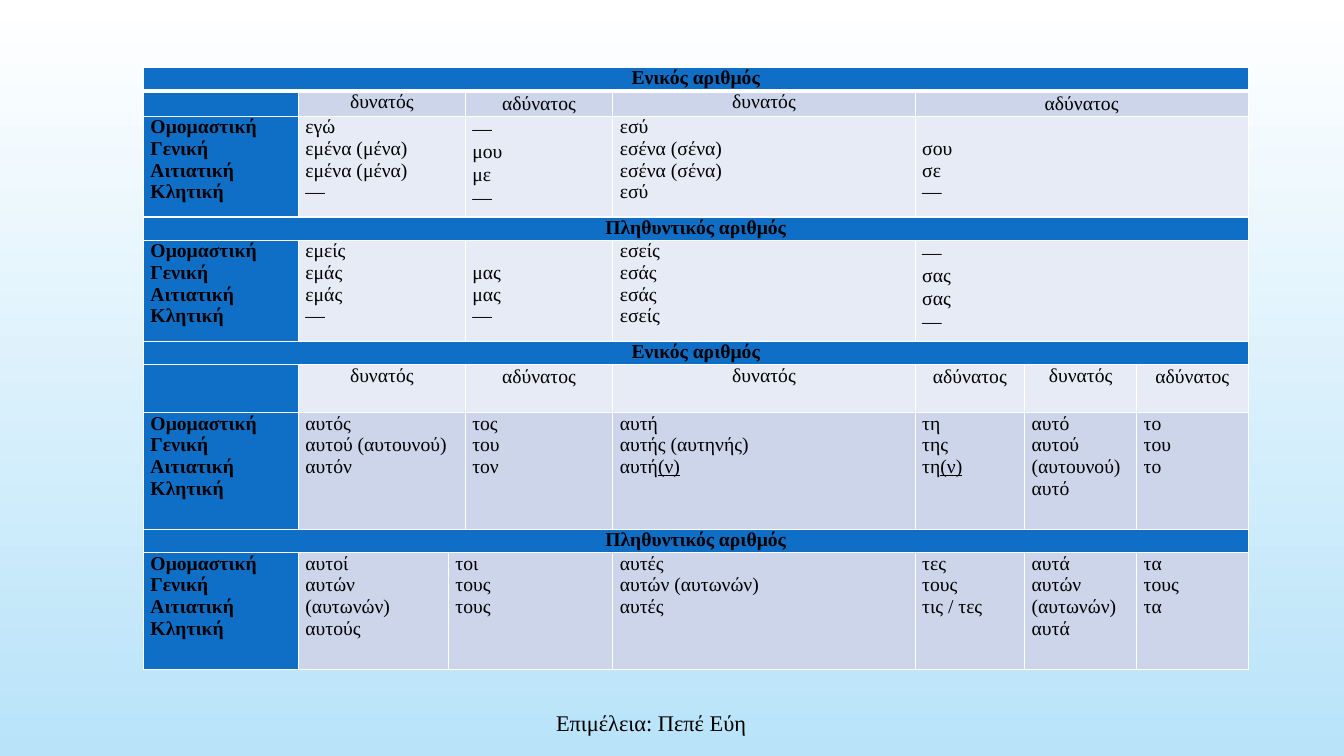
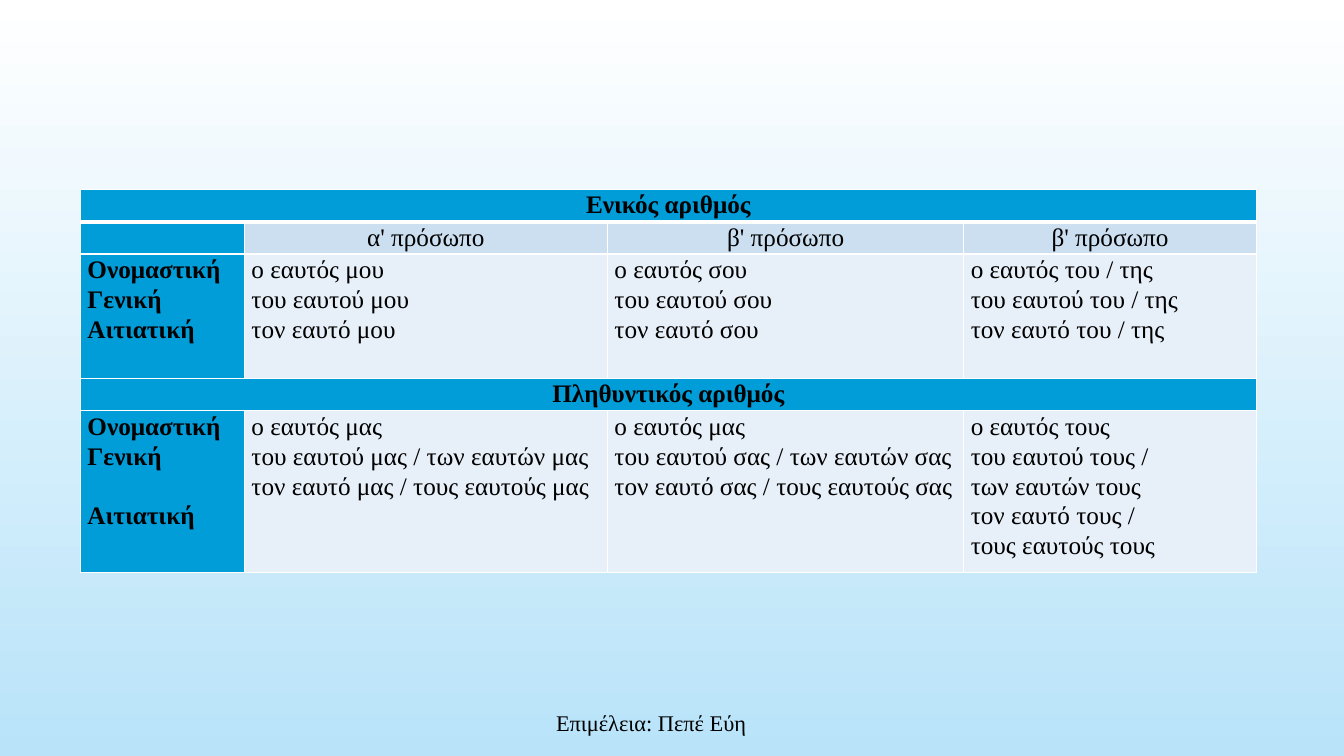
from dataclasses import dataclass

from lxml import etree
from pptx import Presentation
from pptx.dml.color import RGBColor
from pptx.enum import text as t
from pptx.oxml import ns
from pptx.util import Pt

FONT = "Times New Roman"
BLACK = RGBColor(0x00, 0x00, 0x00)
WHITE = RGBColor(0xFF, 0xFF, 0xFF)
SKY = RGBColor(0xB8, 0xE3, 0xF9)
BLUE = RGBColor(0x0F, 0x6F, 0xC6)
BLUE_MID = RGBColor(0xCC, 0xD5, 0xEA)
BLUE_PALE = RGBColor(0xE7, 0xEB, 0xF5)
CYAN = RGBColor(0x00, 0x9D, 0xD9)
CYAN_MID = RGBColor(0xCC, 0xDF, 0xF1)
CYAN_PALE = RGBColor(0xE7, 0xEF, 0xF8)

CREDIT = "Επιμέλεια: Πεπέ Εύη"
SINGULAR, PLURAL = "Ενικός αριθμός", "Πληθυντικός αριθμός"
STRONG, WEAK = "δυνατός", "αδύνατος"
CASES = "Ομομαστική\nΓενική\nΑιτιατική\nΚλητική"
LOOSE = 1.07  # wider line spacing, in lines
LINE_HEIGHT = 1.107  # height of a line per point of text


@dataclass(frozen=True)
class Entry:
    """A table cell; a blank line is a gap, text after | is underlined."""
    words: str
    fill: RGBColor
    span: int = 1
    spacing: float = 1.0
    bold: bool = False
    centred: bool = False


@dataclass(frozen=True)
class Declension:
    left: float
    top: float
    columns: list[float]
    rows: list[float]
    size: float
    entries: list[list[Entry]]


def band(words: str, fill: RGBColor, span: int, spacing: float = 1.0) -> list[Entry]:
    return [Entry(words, fill, span, spacing, bold=True, centred=True)]


def label(words: str, fill: RGBColor, spacing: float = 1.0) -> Entry:
    return Entry(words, fill, spacing=spacing, bold=True)


def heading(words: str, fill: RGBColor, span: int = 1) -> Entry:
    spacing = 1.0 if words == STRONG else LOOSE
    return Entry(words, fill, span, spacing, centred=True)


def add_borders(cell, top: float, bottom: float) -> None:
    properties = cell._tc.get_or_add_tcPr()
    for side, width in (("L", 1), ("R", 1), ("T", top), ("B", bottom)):
        line = etree.SubElement(properties, ns.qn(f"a:ln{side}"), w=str(Pt(width)))
        solid = etree.SubElement(line, ns.qn("a:solidFill"))
        etree.SubElement(solid, ns.qn("a:srgbClr"), val=str(WHITE))


def add_run(paragraph, words: str, size: float, bold: bool = False,
            underline: bool = False) -> None:
    run = paragraph.add_run()
    run.text = words
    font = run.font
    font.name, font.size, font.bold = FONT, Pt(size), bold
    font.color.rgb = BLACK
    if underline:
        font.underline = True


def write_entry(cell, entry: Entry, size: float) -> None:
    gap, first = 0.0, True
    for line in entry.words.split("\n"):
        if not line:
            gap += size * LINE_HEIGHT * entry.spacing
            continue
        if first:
            paragraph = cell.text_frame.paragraphs[0]
            cell.margin_top = Pt(gap)
        else:
            paragraph = cell.text_frame.add_paragraph()
            if gap:
                paragraph.space_before = Pt(gap)
        gap, first = 0.0, False
        paragraph.line_spacing = entry.spacing
        paragraph.alignment = t.PP_ALIGN.CENTER if entry.centred else t.PP_ALIGN.LEFT
        plain, _, underlined = line.partition("|")
        add_run(paragraph, plain, size, entry.bold)
        if underlined:
            add_run(paragraph, underlined, size, entry.bold, underline=True)


def add_declension(slide, plan: Declension) -> None:
    table = slide.shapes.add_table(
        len(plan.rows), len(plan.columns), Pt(plan.left), Pt(plan.top),
        Pt(sum(plan.columns)), Pt(sum(plan.rows))).table
    table.first_row = table.horz_banding = False
    for column, width in zip(table.columns, plan.columns):
        column.width = Pt(width)
    for row, height in zip(table.rows, plan.rows):
        row.height = Pt(height)
    # Tight margins, and small type in cells without text
    for cell in table.iter_cells():
        cell.margin_left = cell.margin_right = Pt(5)
        cell.margin_top = cell.margin_bottom = Pt(0)
    for r, entries in enumerate(plan.entries):
        c = 0
        for entry in entries:
            cell = table.cell(r, c)
            if entry.span > 1:
                cell.merge(table.cell(r, c + entry.span - 1))
            add_borders(cell, 3 if r == 1 else 1, 3 if r == 0 else 1)
            cell.fill.solid()
            cell.fill.fore_color.rgb = entry.fill
            write_entry(cell, entry, plan.size)
            c += entry.span
    for cell in table.iter_cells():
        if not cell.text:
            etree.SubElement(cell.text_frame.paragraphs[0]._p, ns.qn("a:endParaRPr"),
                             sz=str(int(plan.size * 100)))


def add_credit(slide) -> None:
    frame = slide.shapes.add_textbox(Pt(202.3), Pt(501.8), Pt(525.6), Pt(28.8)).text_frame
    frame.word_wrap = True
    frame.vertical_anchor = t.MSO_ANCHOR.MIDDLE
    frame.paragraphs[0].alignment = t.PP_ALIGN.CENTER
    add_run(frame.paragraphs[0], CREDIT, 16)


def paint_background(master) -> None:
    fill = master.background.fill
    fill.gradient()
    fill.gradient_angle = 270
    for stop, colour in zip(fill.gradient_stops, (WHITE, SKY)):
        stop.color.rgb = colour


def personal_pronouns() -> Declension:
    cases, corner = label(CASES, BLUE), Entry("", BLUE)
    singular, plural = band(SINGULAR, BLUE, 8), band(PLURAL, BLUE, 8)
    return Declension(
        102.5, 48.2,
        [110.7, 107.1, 12.1, 105.4, 216, 78.2, 80, 79.6],
        [16.7, 17, 70.2, 16.7, 70.2, 16.7, 34.3, 83.2, 16.7, 83.2],
        14,
        [
            # First and second person
            singular,
            [corner, heading(STRONG, BLUE_MID, 2), heading(WEAK, BLUE_MID),
             heading(STRONG, BLUE_MID), heading(WEAK, BLUE_MID, 3)],
            [cases,
             Entry("εγώ\nεμένα (μένα)\nεμένα (μένα)\n—", BLUE_PALE, 2),
             Entry("—\nμου\nμε\n—", BLUE_PALE, spacing=LOOSE),
             Entry("εσύ\nεσένα (σένα)\nεσένα (σένα)\nεσύ", BLUE_PALE),
             Entry("\nσου\nσε\n—", BLUE_PALE, 3)],
            plural,
            [cases,
             Entry("εμείς\nεμάς\nεμάς\n—", BLUE_PALE, 2),
             Entry("\nμας\nμας\n—", BLUE_PALE),
             Entry("εσείς\nεσάς\nεσάς\nεσείς", BLUE_PALE),
             Entry("—\nσας\nσας\n—", BLUE_PALE, 3, LOOSE)],
            # Third person, in three genders
            singular,
            [corner, heading(STRONG, BLUE_PALE, 2)]
            + [heading(words, BLUE_PALE) for words in (WEAK, STRONG, WEAK, STRONG, WEAK)],
            [cases, Entry("αυτός\nαυτού (αυτουνού)\nαυτόν", BLUE_MID, 2)]
            + [Entry(words, BLUE_MID) for words in (
                "τος\nτου\nτον", "αυτή\nαυτής (αυτηνής)\nαυτή|(ν)", "τη\nτης\nτη|(ν)",
                "αυτό\nαυτού (αυτουνού)\nαυτό", "το\nτου\nτο")],
            plural,
            [cases, Entry("αυτοί\nαυτών (αυτωνών)\nαυτούς", BLUE_MID),
             Entry("τοι\nτους\nτους", BLUE_MID, 2)]
            + [Entry(words, BLUE_MID) for words in (
                "αυτές\nαυτών (αυτωνών)\nαυτές", "τες\nτους\nτις / τες",
                "αυτά\nαυτών (αυτωνών)\nαυτά", "τα\nτους\nτα")],
        ])


def reflexive_pronouns() -> Declension:
    def forms(*columns: str) -> list[Entry]:
        return [Entry(words, CYAN_PALE, spacing=LOOSE) for words in columns]

    return Declension(
        57.5, 135.2, [117.1, 259.3, 254.6, 208.9], [21.4, 21.4, 88.9, 21.4, 110.7], 18,
        [
            band(SINGULAR, CYAN, 4, LOOSE),
            [Entry("", CYAN)] + [heading(words, CYAN_MID) for words in (
                "α' πρόσωπο", "β' πρόσωπο", "β' πρόσωπο")],
            [label("Ονομαστική\nΓενική\nΑιτιατική", CYAN, LOOSE)] + forms(
                "ο εαυτός μου\nτου εαυτού μου\nτον εαυτό μου",
                "ο εαυτός σου\nτου εαυτού σου\nτον εαυτό σου",
                "ο εαυτός του / της\nτου εαυτού του / της\nτον εαυτό του / της"),
            band(PLURAL, CYAN, 4, LOOSE),
            [label("Ονομαστική\nΓενική\n\nΑιτιατική", CYAN, LOOSE)] + forms(
                "ο εαυτός μας\nτου εαυτού μας / των εαυτών μας\n"
                "τον εαυτό μας / τους εαυτούς μας",
                "ο εαυτός μας\nτου εαυτού σας / των εαυτών σας\n"
                "τον εαυτό σας / τους εαυτούς σας",
                "ο εαυτός τους\nτου εαυτού τους /\nτων εαυτών τους\n"
                "τον εαυτό τους /\nτους εαυτούς τους"),
        ])


def main() -> None:
    prs = Presentation()
    prs.slide_width, prs.slide_height = Pt(960), Pt(540)
    paint_background(prs.slide_master)
    for plan in (personal_pronouns(), reflexive_pronouns()):
        slide = prs.slides.add_slide(prs.slide_layouts[6])
        add_credit(slide)
        add_declension(slide, plan)
    prs.save("out.pptx")


if __name__ == "__main__":
    main()
